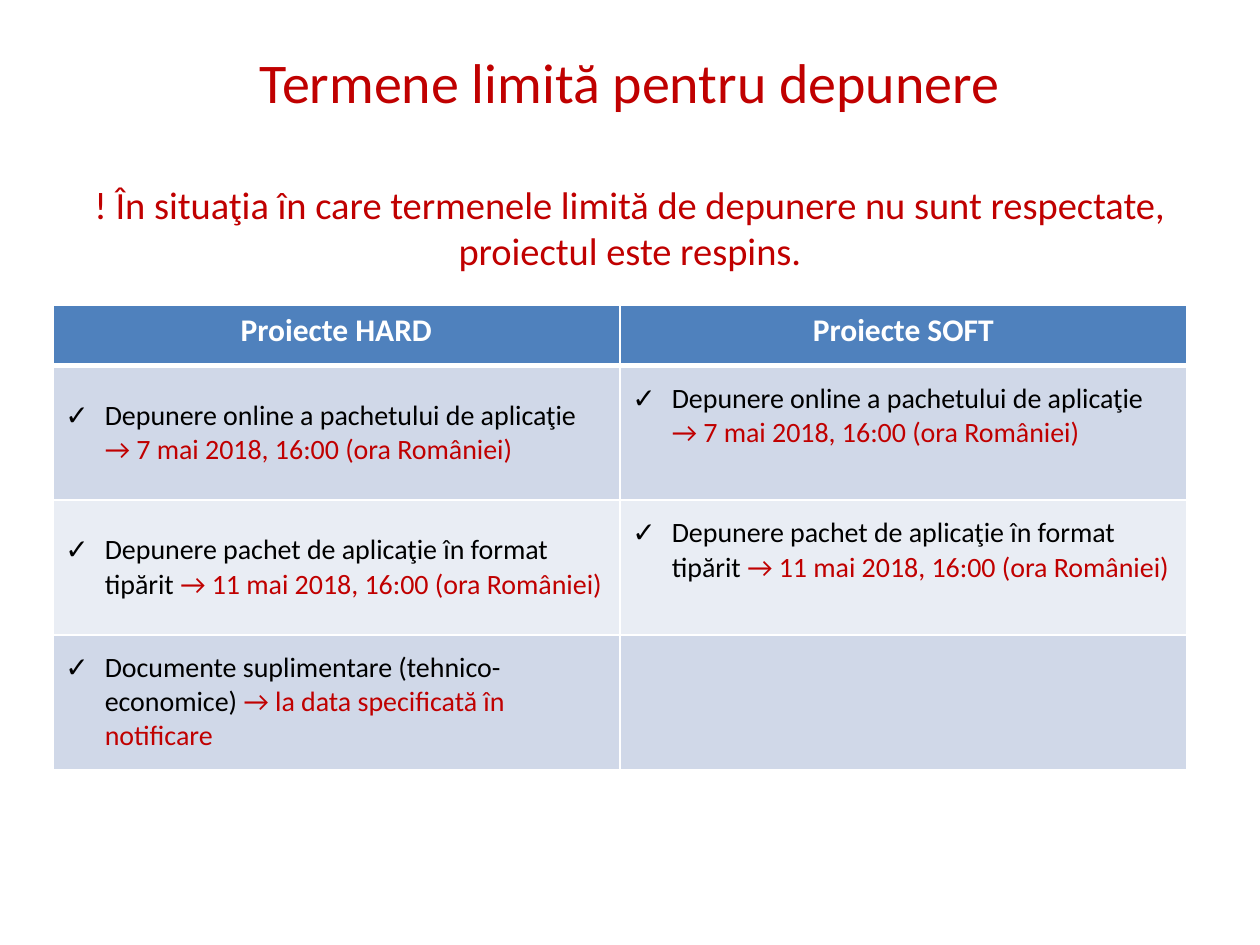
from dataclasses import dataclass

from lxml.etree import SubElement
from pptx import Presentation
from pptx.dml.color import RGBColor as Color
from pptx.enum.text import MSO_ANCHOR as Anchor, MSO_AUTO_SIZE as AutoSize, PP_ALIGN as Align
from pptx.oxml.ns import qn
from pptx.slide import Slide
from pptx.table import _Cell as Cell
from pptx.text.text import _Paragraph as Paragraph
from pptx.util import Pt


@dataclass(frozen=True)
class Theme:
    font: str = "Calibri"
    accent: str = "C00000"
    body: str = "000000"
    white: str = "FFFFFF"
    header_fill: str = "4F81BD"
    band_fills: tuple[str, str] = ("D0D8E8", "E9EDF4")
    title_size: int = 32
    warning_size: int = 22
    header_size: int = 18
    body_size: int = 16


@dataclass(frozen=True)
class Deadline:
    row: int
    column: int
    task: str
    due: str
    bottom_margin: float = 3.6


THEME = Theme()
TITLE = "Termene limită pentru depunere"
WARNING = ("! În situaţia în care termenele limită de depunere nu sunt respectate, "
           "proiectul este respins.")
HEADERS = ("Proiecte HARD", "Proiecte SOFT")
ONLINE = ("Depunere online a pachetului de aplicaţie ", "→ 7 mai 2018, 16:00 (ora României)")
PRINTED = ("Depunere pachet de aplicaţie în format tipărit ",
           "→ 11 mai 2018, 16:00 (ora României)")
EXTRA = ("Documente suplimentare (tehnico-economice) ", "→ la data specificată în notificare")
RAISED = 23.2
DEADLINES = (
    Deadline(1, 0, *ONLINE),
    Deadline(1, 1, *ONLINE, RAISED),
    Deadline(2, 0, *PRINTED),
    Deadline(2, 1, *PRINTED, RAISED),
    Deadline(3, 0, *EXTRA),
)
ROW_HEIGHTS = (34.6, 77, 77, 77)
COLUMN_WIDTH = 324


def style(paragraph: Paragraph, size: int, color: str, bold: bool = False) -> None:
    font = paragraph.font
    font.name, font.size, font.bold = THEME.font, Pt(size), bold
    font.color.rgb = Color.from_string(color)


def add_check_bullet(paragraph: Paragraph) -> None:
    properties = paragraph._p.get_or_add_pPr()
    properties.set("marL", str(Pt(22.5)))
    properties.set("indent", str(-Pt(22.5)))
    SubElement(properties, qn("a:buFont"), typeface="Arial")
    SubElement(properties, qn("a:buChar"), char="✓")


def paint_cell(cell: Cell, fill: str, bottom_width: float = 1) -> None:
    """Fill the cell and give it white borders."""
    cell.fill.solid()
    cell.fill.fore_color.rgb = Color.from_string(fill)
    properties = cell._tc.get_or_add_tcPr()
    for index, side in enumerate("LRTB"):
        width = bottom_width if side == "B" else 1
        line = SubElement(properties, qn(f"a:ln{side}"), w=str(Pt(width)))
        SubElement(SubElement(line, qn("a:solidFill")), qn("a:srgbClr"), val=THEME.white)
        properties.insert(index, line)


def add_title(slide: Slide) -> None:
    title = slide.shapes.title
    title.left, title.top, title.width, title.height = Pt(36), Pt(21.6), Pt(648), Pt(140.4)
    frame = title.text_frame
    frame.word_wrap, frame.auto_size = True, AutoSize.NONE
    frame.vertical_anchor = Anchor.MIDDLE
    frame.text = f"{TITLE}\n{WARNING}"
    for paragraph, size in zip(frame.paragraphs, (THEME.title_size, THEME.warning_size)):
        paragraph.alignment = Align.CENTER
        style(paragraph, size, THEME.accent)
    frame.paragraphs[1].space_before = Pt(38)


def fill_deadline(cell: Cell, deadline: Deadline) -> None:
    cell.vertical_anchor = Anchor.MIDDLE
    cell.margin_bottom = Pt(deadline.bottom_margin)
    paragraph = cell.text_frame.paragraphs[0]
    add_check_bullet(paragraph)
    style(paragraph, THEME.body_size, THEME.body)
    paragraph.add_run().text = deadline.task
    due = paragraph.add_run()
    due.text = deadline.due
    due.font.color.rgb = Color.from_string(THEME.accent)


def add_deadline_table(slide: Slide) -> None:
    table = slide.shapes.add_table(
        len(ROW_HEIGHTS), len(HEADERS), Pt(30.2), Pt(174.2),
        Pt(COLUMN_WIDTH * len(HEADERS)), Pt(sum(ROW_HEIGHTS))).table
    for row, height in zip(table.rows, ROW_HEIGHTS):
        row.height = Pt(height)
    for column, header in enumerate(HEADERS):
        table.columns[column].width = Pt(COLUMN_WIDTH)
        cell = table.cell(0, column)
        cell.text = header
        paragraph = cell.text_frame.paragraphs[0]
        paragraph.alignment = Align.CENTER
        style(paragraph, THEME.header_size, THEME.white, bold=True)
        paint_cell(cell, THEME.header_fill, bottom_width=3)
        for row in range(1, len(ROW_HEIGHTS)):
            paint_cell(table.cell(row, column), THEME.band_fills[(row - 1) % 2])
    for deadline in DEADLINES:
        fill_deadline(table.cell(deadline.row, deadline.column), deadline)


def main() -> None:
    presentation = Presentation()
    presentation.slide_width, presentation.slide_height = Pt(720), Pt(540)
    slide = presentation.slides.add_slide(presentation.slide_layouts[5])
    add_title(slide)
    add_deadline_table(slide)
    presentation.save("out.pptx")


if __name__ == "__main__":
    main()
